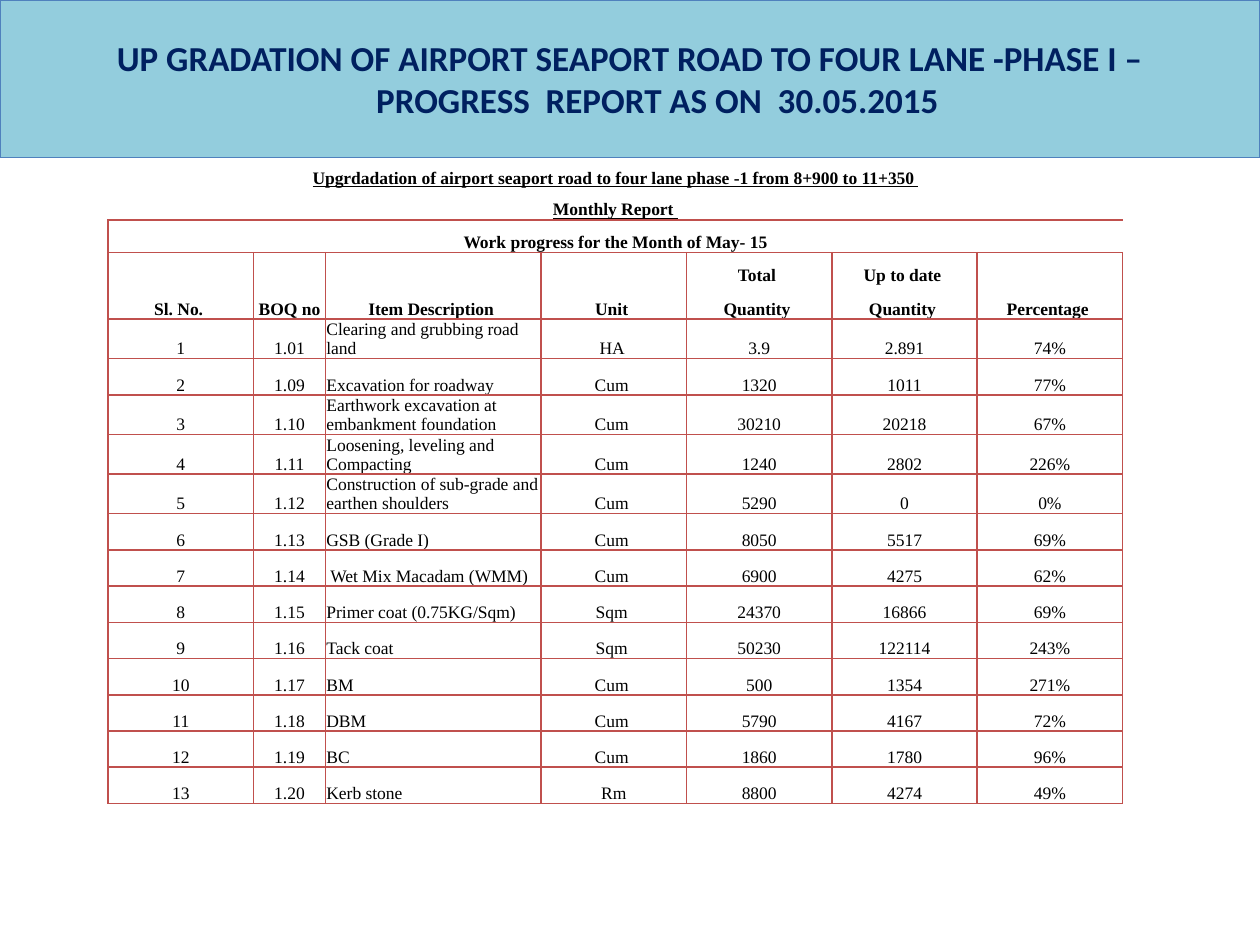
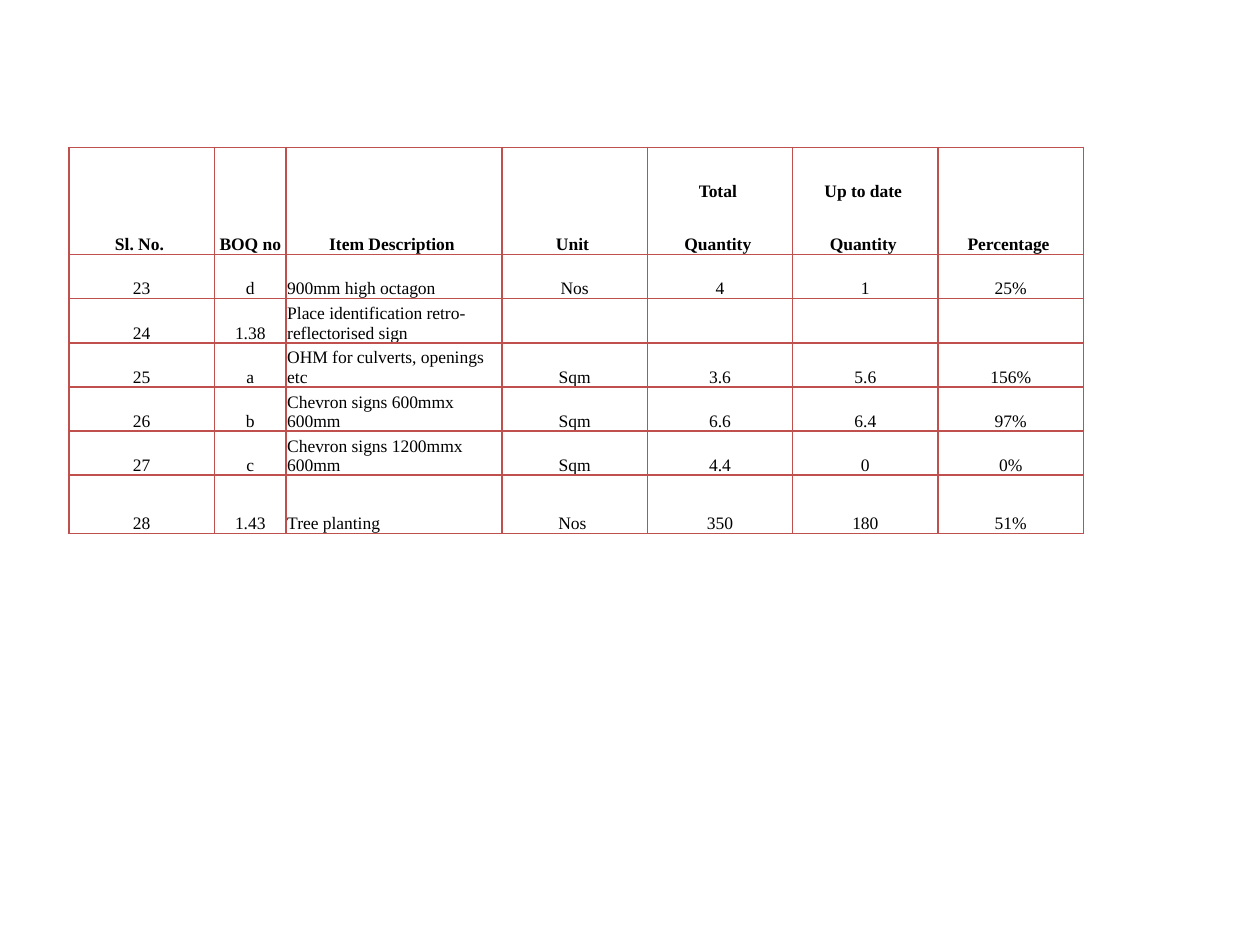
from lxml import etree
from pptx import Presentation
from pptx.dml.color import RGBColor
from pptx.enum import shapes, text
from pptx.oxml import ns
from pptx.util import Cm, Pt

BAND = RGBColor(0x93, 0xCD, 0xDD)
EDGE = RGBColor(0x4F, 0x81, 0xBD)
NAVY = RGBColor(0x00, 0x20, 0x60)
BLACK = RGBColor(0, 0, 0)
GRID = RGBColor(0xC0, 0x50, 0x4D)
PLAIN = "{2D5ABB26-0587-4C30-8999-92F81FD0307C}"

WIDTHS = [2.93, 1.45, 4.35, 2.93, 2.93, 2.93, 2.93]
ITEM = 2
SPLIT = (4, 5)  # columns whose heading takes two cells

TITLE = ("UP GRADATION OF AIRPORT SEAPORT ROAD TO FOUR LANE -PHASE I –\v"
         " PROGRESS  REPORT AS ON  30.05.2015")
CAPTIONS = [
    ("Upgrdadation of airport seaport road to four lane phase -1"
     " from 8+900 to 11+350 ", True, ""),
    ("Monthly Report ", True, "B"),
    ("Work progress for the Month of May- 15", False, "LTB"),
]
HEAD = [
    ("Sl. No. ", "BOQ no", "Item Description ", "Unit ", "Total ",
     "Up to date ", "Percentage "),
    ("", "", "", "", "Quantity ", "Quantity ", ""),
]
ROADS = [
    ("1", "1.01", "Clearing and grubbing road land", "HA ", "3.9", "2.891", "74%"),
    ("2", "1.09", "Excavation for roadway", "Cum ", "1320", "1011", "77%"),
    ("3", "1.10", "Earthwork excavation at embankment foundation", "Cum ",
     "30210", "20218", "67%"),
    ("4", "1.11", "Loosening, leveling and Compacting", "Cum ", "1240", "2802", "226%"),
    ("5", "1.12", "Construction of sub-grade and earthen shoulders", "Cum ",
     "5290", "0", "0%"),
    ("6", "1.13", "GSB (Grade I)", "Cum ", "8050", "5517", "69%"),
    ("7", "1.14", " Wet Mix Macadam (WMM)", "Cum ", "6900", "4275", "62%"),
    ("8", "1.15", "Primer coat (0.75KG/Sqm)", "Sqm ", "24370", "16866", "69%"),
    ("9", "1.16", "Tack coat", "Sqm ", "50230", "122114", "243%"),
    ("10", "1.17", "BM", "Cum ", "500", "1354", "271%"),
    ("11", "1.18", "DBM", "Cum ", "5790", "4167", "72%"),
    ("12", "1.19", "BC", "Cum ", "1860", "1780", "96%"),
    ("13", "1.20", "Kerb stone", "Rm", "8800", "4274", "49%"),
]
SIGNS = [
    ("23", "d", "900mm high octagon", "Nos", "4", "1", "25%"),
    ("24", "1.38", "Place identification retro-reflectorised sign", "", "", "", ""),
    ("25", "a", "OHM for culverts, openings etc", "Sqm", "3.6", "5.6", "156%"),
    ("26", "b", "Chevron signs 600mmx 600mm", "Sqm", "6.6", "6.4", "97%"),
    ("27", "c", "Chevron signs 1200mmx 600mm", "Sqm", "4.4", "0", "0%"),
    ("28", "1.43", "Tree planting", "Nos ", "350", "180", "51%"),
]


def style(para, face, size, color, bold=False, line=False):
    for run in para.runs:
        font = run.font
        font.name, font.size, font.bold = face, Pt(size), bold
        font.color.rgb = color
        font.underline = line


def add_title(slide, words):
    box = slide.shapes.add_shape(shapes.MSO_SHAPE.RECTANGLE, 0, 0,
                                 Cm(25.4), Cm(3.17))
    box.shadow.inherit = False
    box.fill.solid()
    box.fill.fore_color.rgb = BAND
    box.line.color.rgb = EDGE
    box.line.width = Pt(0.75)
    frame = box.text_frame
    frame.word_wrap = True
    frame.vertical_anchor = text.MSO_ANCHOR.MIDDLE
    para = frame.paragraphs[0]
    para.text = words
    para.alignment = text.PP_ALIGN.CENTER
    props = para._p.get_or_add_pPr()
    props.set("marL", str(Cm(0.96)))
    props.set("indent", str(-Cm(0.96)))
    style(para, "Calibri", 20, NAVY, bold=True)


def set_edges(cell, sides):
    """Draw the named sides (letters of LRTB) and clear the others."""
    props = cell._tc.get_or_add_tcPr()
    for side in "LRTB":
        line = etree.SubElement(props, ns.qn(f"a:ln{side}"), w=str(Pt(1)))
        if side in sides:
            fill = etree.SubElement(line, ns.qn("a:solidFill"))
            etree.SubElement(fill, ns.qn("a:srgbClr"), val=str(GRID))
        else:
            etree.SubElement(line, ns.qn("a:noFill"))


def set_cell(cell, words, sides="LRTB", bold=False, line=False, left=False):
    set_edges(cell, sides)
    cell.fill.background()
    cell.vertical_anchor = text.MSO_ANCHOR.BOTTOM
    cell.margin_left = cell.margin_right = cell.margin_top = Cm(0.02)
    cell.margin_bottom = 0
    if not words:
        return
    para = cell.text_frame.paragraphs[0]
    para.text = words
    para.alignment = text.PP_ALIGN.LEFT if left else text.PP_ALIGN.CENTER
    style(para, "Times New Roman", 10, BLACK, bold, line)


def add_caption(grid, row, words, line, sides):
    cells = [grid.cell(row, col) for col in range(len(WIDTHS))]
    cells[0].merge(cells[-1])
    set_cell(cells[0], words, sides, bold=True, line=line)
    for cell in cells[1:]:
        set_cell(cell, "", sides.replace("L", ""))


def add_head(grid, top):
    for col in range(len(WIDTHS)):
        upper, lower = grid.cell(top, col), grid.cell(top + 1, col)
        split = col in SPLIT
        if not split:
            upper.merge(lower)
        set_cell(upper, HEAD[0][col], "LRT" if split else "LRTB", bold=True)
        set_cell(lower, HEAD[1][col], "LRB", bold=True)


def add_report(slide, left, top, heights, items, captions=()):
    """Table of captions, a two-row heading and one row for each work item."""
    frame = slide.shapes.add_table(len(heights), len(WIDTHS), Cm(left), Cm(top),
                                   Cm(sum(WIDTHS)), Cm(sum(heights)))
    grid = frame.table
    grid._tbl.tblPr.find(ns.qn("a:tableStyleId")).text = PLAIN
    grid.first_row = grid.horz_banding = False
    for column, width in zip(grid.columns, WIDTHS):
        column.width = Cm(width)
    for row, height in zip(grid.rows, heights):
        row.height = Cm(height)
    for row, caption in enumerate(captions):
        add_caption(grid, row, *caption)
    add_head(grid, len(captions))
    for row, item in enumerate(items, len(captions) + len(HEAD)):
        for col, words in enumerate(item):
            set_cell(grid.cell(row, col), words, left=col == ITEM)


def main():
    deck = Presentation()
    deck.slide_width, deck.slide_height = Cm(25.4), Cm(19.05)
    blank = deck.slide_layouts[6]

    first = deck.slides.add_slide(blank)
    add_title(first, TITLE)
    add_report(first, 2.18, 3.17, [0.63] * 2 + [0.66] + [0.67] * 2 + [0.73] * 13,
               ROADS, CAPTIONS)

    second = deck.slides.add_slide(blank)
    add_report(second, 1.39, 2.97, [1.08] * 2 + [0.89] * 5 + [1.17], SIGNS)

    deck.save("out.pptx")


if __name__ == "__main__":
    main()
